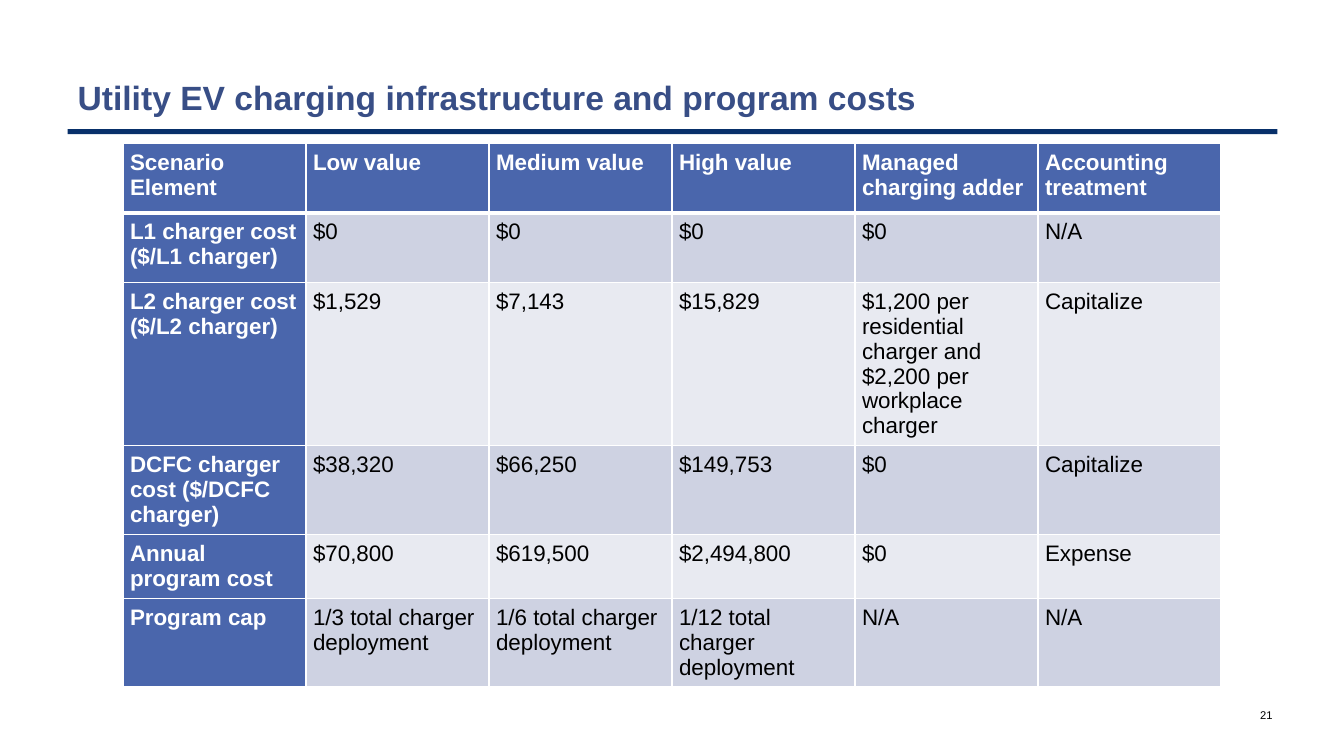
import pptx
import pptx.util
import pptx.dml.color
import pptx.enum.shapes
import pptx.enum.text
import pptx.oxml
import pptx.oxml.ns
from dataclasses import dataclass

Inches = pptx.util.Inches
Pt = pptx.util.Pt

TITLE = "Utility EV charging infrastructure and program costs"
PAGE = "21"
COSTS = [
    ("Scenario Element", "Low value", "Medium value", "High value",
     "Managed charging adder", "Accounting treatment"),
    ("L1 charger cost ($/L1 charger)", "$0", "$0", "$0", "$0", "N/A"),
    ("L2 charger cost ($/L2 charger)", "$1,529", "$7,143", "$15,829",
     "$1,200 per residential charger and $2,200 per workplace charger",
     "Capitalize"),
    ("DCFC charger cost ($/DCFC charger)", "$38,320", "$66,250", "$149,753",
     "$0", "Capitalize"),
    ("Annual program cost", "$70,800", "$619,500", "$2,494,800",
     "$0", "Expense"),
    ("Program cap", "1/3 total charger deployment",
     "1/6 total charger deployment", "1/12 total charger deployment",
     "N/A", "N/A"),
]
HEIGHTS = [0.69, 0.69, 1.25, 0.88, 0.51, 0.69]


@dataclass(frozen=True)
class Theme:
    font: str = "Arial"
    title: str = "384E86"
    rule: str = "08306A"
    head: str = "4A66AC"
    bands: tuple = ("E8EAF1", "CED2E2")
    light: str = "FFFFFF"
    dark: str = "000000"
    big: int = 24
    body: int = 16
    small: int = 8


THEME = Theme()


def color(code):
    return pptx.dml.color.RGBColor.from_string(code)


def style(frame, size, code, bold=False, align=pptx.enum.text.PP_ALIGN.LEFT):
    for para in frame.paragraphs:
        para.alignment = align
        for run in para.runs:
            run.font.name = THEME.font
            run.font.size = Pt(size)
            run.font.bold = bold
            run.font.color.rgb = color(code)


def place(shape, left, top, width, height):
    shape.left, shape.top = Inches(left), Inches(top)
    shape.width, shape.height = Inches(width), Inches(height)


def border(cell, side, width):
    """Draw one cell border; call before the cell is filled."""
    line = pptx.oxml.parse_xml(
        f'<a:{side} {pptx.oxml.ns.nsdecls("a")} w="{Pt(width)}">'
        f'<a:solidFill><a:srgbClr val="{THEME.light}"/></a:solidFill>'
        f'</a:{side}>')
    cell._tc.get_or_add_tcPr().append(line)


def add_title(slide):
    title = slide.shapes.title
    place(title, 0.67, 0.71, 12, 0.5)
    frame = title.text_frame
    frame.text = TITLE
    frame.word_wrap = True
    frame.auto_size = pptx.enum.text.MSO_AUTO_SIZE.NONE
    frame.vertical_anchor = pptx.enum.text.MSO_ANCHOR.BOTTOM
    style(frame, THEME.big, THEME.title, True)


def add_rule(slide):
    rule = slide.shapes.add_shape(
        pptx.enum.shapes.MSO_SHAPE.RECTANGLE,
        Inches(0.67), Inches(1.28), Inches(12), Inches(0.05))
    rule.shadow.inherit = False
    rule.fill.solid()
    rule.fill.fore_color.rgb = color(THEME.rule)
    rule.line.fill.background()


def add_costs(slide):
    count = len(COSTS[0])
    width = 10.89
    table = slide.shapes.add_table(
        len(COSTS), count, Inches(1.22), Inches(1.42),
        Inches(width), Inches(sum(HEIGHTS))).table
    table.first_col = True
    for col in table.columns:
        col.width = Inches(width / count)
    for r, (row, high) in enumerate(zip(COSTS, HEIGHTS)):
        table.rows[r].height = Inches(high)
        for c, text in enumerate(row):
            head = r == 0 or c == 0
            cell = table.cell(r, c)
            cell.text_frame.text = text
            cell.margin_left = cell.margin_right = Inches(0.07)
            cell.margin_top = cell.margin_bottom = Inches(0.07)
            for side in ("lnL", "lnR", "lnT", "lnB"):
                thick = (r, side) in ((0, "lnB"), (1, "lnT"))
                border(cell, side, 3 if thick else 1)
            cell.fill.solid()
            cell.fill.fore_color.rgb = color(
                THEME.head if head else THEME.bands[r % 2])
            style(cell.text_frame, THEME.body,
                  THEME.light if head else THEME.dark, head)


def add_page(slide):
    box = slide.shapes.add_textbox(
        Inches(12.22), Inches(6.89), Inches(0.5), Inches(0.4))
    frame = box.text_frame
    frame.text = PAGE
    frame.word_wrap = True
    frame.vertical_anchor = pptx.enum.text.MSO_ANCHOR.MIDDLE
    style(frame, THEME.small, THEME.dark,
          align=pptx.enum.text.PP_ALIGN.RIGHT)


def main():
    deck = pptx.Presentation()
    deck.slide_width, deck.slide_height = Inches(13.33), Inches(7.5)
    slide = deck.slides.add_slide(deck.slide_layouts.get_by_name("Title Only"))
    add_rule(slide)
    add_title(slide)
    add_costs(slide)
    add_page(slide)
    deck.save("out.pptx")


if __name__ == "__main__":
    main()
